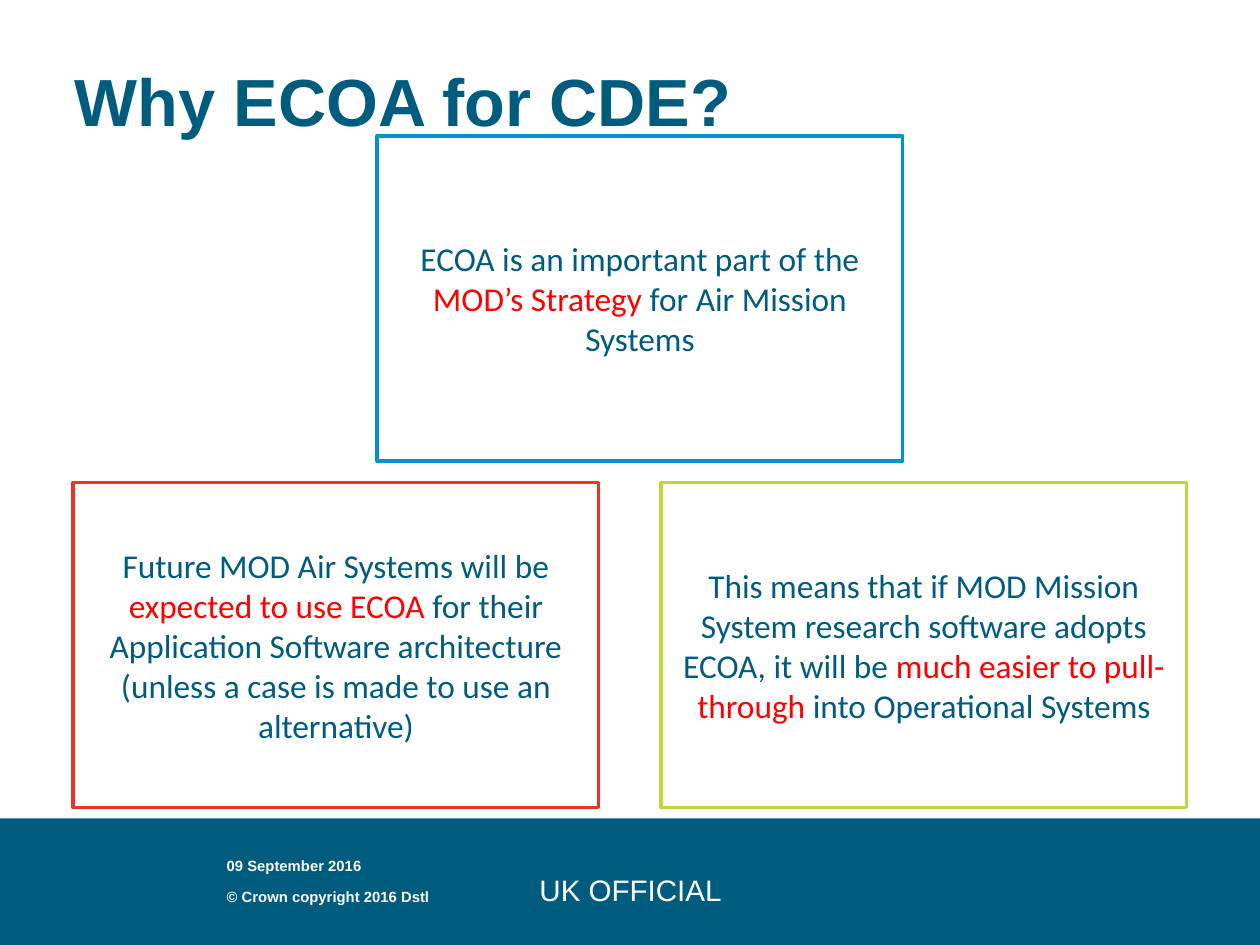
from pptx import Presentation
from pptx.dml.color import RGBColor
from pptx.enum.shapes import MSO_SHAPE
from pptx.enum.text import MSO_ANCHOR, MSO_AUTO_SIZE, PP_ALIGN
from pptx.util import Inches, Pt

TEAL, WHITE, RED = "005C7E", "FFFFFF", "FF0000"


def color(value):
    return RGBColor.from_string(value)


class SlideBuilder:
    title_style = {"name": "Arial", "size": Pt(36), "bold": True}
    box_style = {"name": "Calibri", "size": Pt(18), "bold": False}
    marking_style = {"name": "Arial", "size": Pt(16), "bold": False}
    footer_style = {"name": "Arial", "size": Pt(8), "bold": True}

    def __init__(self, presentation):
        self.slide = presentation.slides.add_slide(presentation.slide_layouts[5])

    def fill_text(self, shape, paragraphs, style, anchor, paragraph_format):
        frame = shape.text_frame
        frame_format = {
            "word_wrap": True,
            "auto_size": MSO_AUTO_SIZE.NONE,
            "vertical_anchor": anchor,
            "margin_left": Inches(0.09),
            "margin_right": Inches(0.09),
            "margin_top": Inches(0.05),
            "margin_bottom": Inches(0.05),
        }
        for name, value in frame_format.items():
            setattr(frame, name, value)
        for index, runs in enumerate(paragraphs):
            paragraph = frame.add_paragraph() if index else frame.paragraphs[0]
            for name, value in paragraph_format.items():
                setattr(paragraph, name, value)
            for text, text_color in runs:
                run = paragraph.add_run()
                run.text = text
                for name, value in style.items():
                    setattr(run.font, name, value)
                run.font.color.rgb = color(text_color)

    def title(self, text, position):
        shape = self.slide.shapes.title
        for name, value in zip(("left", "top", "width", "height"), position):
            setattr(shape, name, Inches(value))
        self.fill_text(shape, [[(text, TEAL)]], self.title_style, MSO_ANCHOR.TOP,
                       {"alignment": PP_ALIGN.LEFT, "line_spacing": 1.2})

    def rectangle(self, position, fill, line=None):
        shape = self.slide.shapes.add_shape(MSO_SHAPE.RECTANGLE, *map(Inches, position))
        shape.shadow.inherit = False
        shape.fill.solid()
        shape.fill.fore_color.rgb = color(fill)
        if line:
            shape.line.color.rgb = color(line)
            shape.line.width = Pt(2)
        else:
            shape.line.fill.background()
        return shape

    def message(self, left, top, line, paragraphs):
        shape = self.rectangle((left, top, 3.94, 2.44), WHITE, line)
        self.fill_text(shape, paragraphs, self.box_style, MSO_ANCHOR.MIDDLE,
                       {"alignment": PP_ALIGN.CENTER})

    def label(self, text, position, style, anchor, paragraph_format):
        shape = self.slide.shapes.add_textbox(*map(Inches, position))
        self.fill_text(shape, [[(text, WHITE)]], style, anchor, paragraph_format)


def main():
    presentation = Presentation()
    presentation.slide_width = Inches(9.45)
    presentation.slide_height = Inches(7.09)
    builder = SlideBuilder(presentation)

    builder.rectangle((0, 6.14, 9.45, 0.95), TEAL)
    builder.title("Why ECOA for CDE?", (0.47, 0.28, 8.5, 1.18))

    messages = [
        (2.83, 1.02, "0092CF", [
            [("ECOA is an important part of the ", TEAL),
             ("MOD’s Strategy ", RED),
             ("for Air Mission Systems", TEAL)],
        ]),
        (0.55, 3.62, "EE3224", [
            [("Future MOD Air Systems will be ", TEAL),
             ("expected to use ECOA ", RED),
             ("for their Application Software architecture", TEAL)],
            [("(unless a case is made to use an alternative)", TEAL)],
        ]),
        (4.96, 3.62, "BDD73D", [
            [("This means that if MOD Mission System research software adopts "
              "ECOA, it will be ", TEAL),
             ("much easier to pull-through ", RED),
             ("into Operational Systems", TEAL)],
        ]),
    ]
    for message in messages:
        builder.message(*message)

    builder.label("UK OFFICIAL", (3.43, 6.17, 2.6, 0.94), builder.marking_style,
                  MSO_ANCHOR.MIDDLE,
                  {"alignment": PP_ALIGN.CENTER, "line_spacing": Pt(24)})
    footers = [
        ("09 September 2016", 6.3, MSO_ANCHOR.BOTTOM),
        ("© Crown copyright 2016 Dstl", 6.61, MSO_ANCHOR.TOP),
    ]
    for text, top, anchor in footers:
        builder.label(text, (1.61, top, 1.81, 0.31), builder.footer_style, anchor,
                      {"alignment": PP_ALIGN.LEFT})

    presentation.save("out.pptx")


if __name__ == "__main__":
    main()
